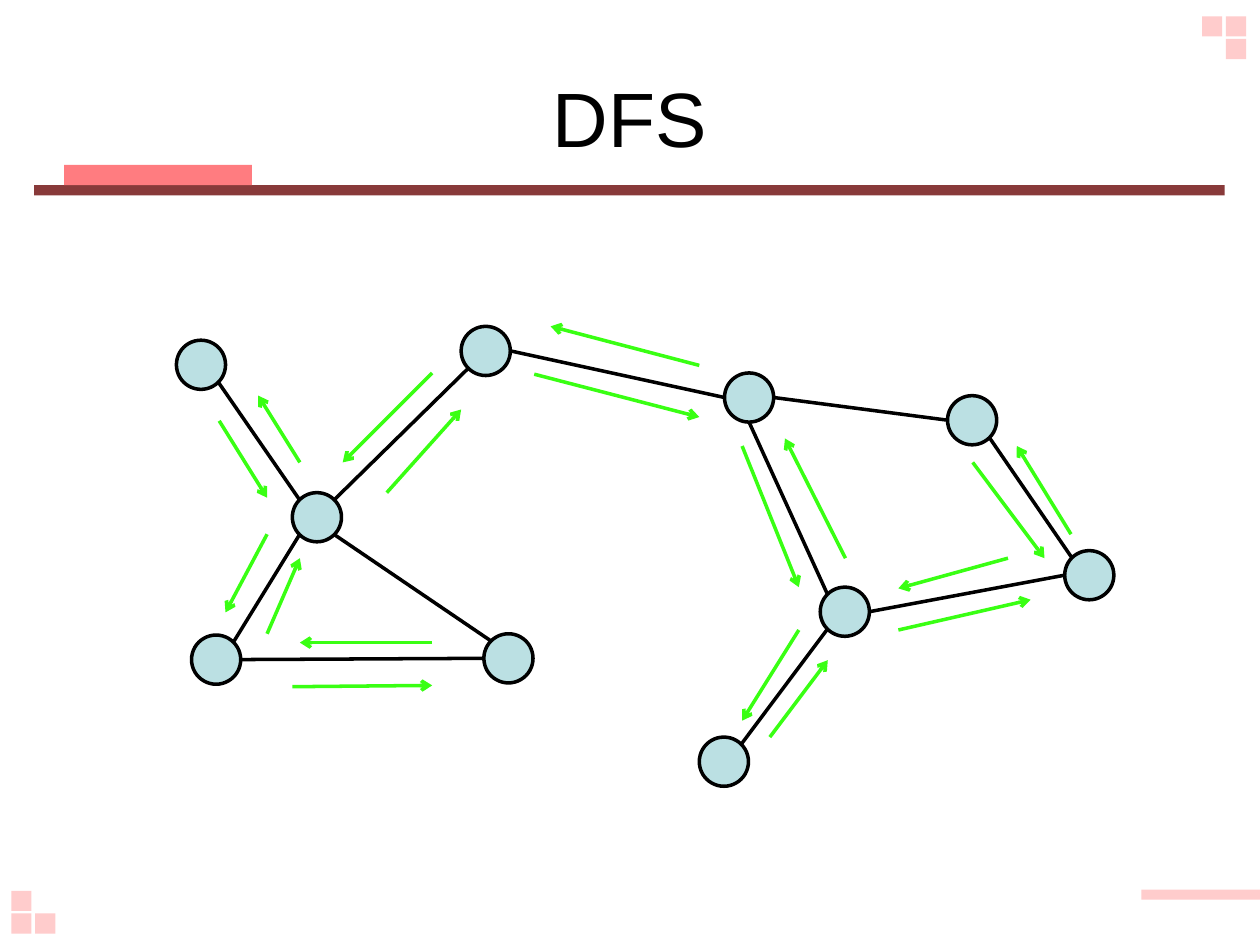
"""Build a slide that traces a depth-first search on a graph."""
from lxml import etree
from pptx import Presentation
from pptx.dml.color import RGBColor
from pptx.enum.shapes import MSO_CONNECTOR, MSO_SHAPE
from pptx.enum.text import MSO_ANCHOR, PP_ALIGN
from pptx.oxml.ns import qn
from pptx.util import Inches, Pt


def paint(part, color):
    part.solid()
    part.fore_color.rgb = RGBColor.from_string(color)


def draw(start, end, color):
    line = slide.shapes.add_connector(
        MSO_CONNECTOR.STRAIGHT, *[Inches(v) for v in (*start, *end)])
    paint(line.line.fill, color)
    line.line.width = Pt(2)
    etree.SubElement(line._element.spPr, qn("a:effectLst"))
    return line


deck = Presentation()
deck.slide_width, deck.slide_height = Inches(10), Inches(7.5)
slide = deck.slides.add_slide(deck.slide_layouts[6])

bars = [
    (0.27, 1.47, 9.45, 0.08, "883A3A"),
    (0.51, 1.31, 1.49, 0.16, "FF7C80"),
    (9.06, 7.06, 0.94, 0.08, "FFCCCC"),
]
spots = [(9.73, 0.13), (9.54, 0.13), (9.73, 0.31),
         (0.09, 7.25), (0.28, 7.25), (0.09, 7.07)]
bars += [(x, y, 0.16, 0.16, "FFCCCC") for x, y in spots]
for *box, color in bars:
    bar = slide.shapes.add_shape(MSO_SHAPE.RECTANGLE, *[Inches(v) for v in box])
    bar.shadow.inherit = False
    paint(bar.fill, color)
    bar.line.fill.background()

title = slide.shapes.add_textbox(Inches(0.5), Inches(0.3), Inches(9), Inches(1.25))
frame = title.text_frame
frame.word_wrap = True
frame.vertical_anchor = MSO_ANCHOR.MIDDLE
text = frame.paragraphs[0]
text.text = "DFS"
text.alignment = PP_ALIGN.CENTER
text.font.name, text.font.size = "Arial", Pt(44)
text.font.color.rgb = RGBColor.from_string("000000")

size = 0.39
nodes = {
    "A": (3.66, 2.59), "B": (2.32, 3.91), "C": (3.84, 5.03), "D": (5.75, 2.96),
    "E": (5.55, 5.85), "F": (7.52, 3.14), "G": (8.45, 4.37), "H": (6.51, 4.66),
    "I": (1.52, 5.04), "J": (1.4, 2.7),
}
for x, y in nodes.values():
    node = slide.shapes.add_shape(
        MSO_SHAPE.OVAL, Inches(x), Inches(y), Inches(size), Inches(size))
    node.shadow.inherit = False
    paint(node.fill, "BBE0E3")
    paint(node.line.fill, "000000")
    node.line.width = Pt(2)

near, far = 0.15 * size, 0.85 * size
sides = {
    "N": (size / 2, 0), "S": (size / 2, size),
    "W": (0, size / 2), "E": (size, size / 2),
    "NW": (near, near), "NE": (far, near), "SW": (near, far), "SE": (far, far),
}
edges = [
    ("J", "SE", "B", "NW"), ("B", "NE", "A", "SW"), ("B", "SW", "I", "NE"),
    ("B", "SE", "C", "NW"), ("I", "E", "C", "W"), ("D", "W", "A", "E"),
    ("D", "S", "H", "NW"), ("H", "SW", "E", "NE"), ("H", "E", "G", "W"),
    ("D", "E", "F", "W"), ("F", "SE", "G", "NW"),
]
for tail, out, head, into in edges:
    ends = [[a + b for a, b in zip(nodes[name], sides[side])]
            for name, side in ((tail, out), (head, into))]
    draw(*ends, "000000")

steps = [
    ((3.43, 2.96), (2.72, 3.67)), ((2.38, 3.67), (2.05, 3.14)),
    ((1.74, 3.34), (2.12, 3.95)), ((2.12, 4.24), (1.79, 4.86)),
    ((2.32, 5.45), (3.43, 5.44)), ((3.43, 5.1), (2.38, 5.1)),
    ((2.12, 5.03), (2.38, 4.43)), ((3.07, 3.91), (3.66, 3.25)),
    ((4.24, 2.97), (5.55, 3.31)), ((5.89, 3.54), (6.34, 4.66)),
    ((6.34, 5), (5.89, 5.72)), ((6.11, 5.85), (6.57, 5.24)),
    ((7.13, 5), (8.18, 4.76)), ((8.5, 4.24), (8.07, 3.54)),
    ((7.72, 3.67), (8.29, 4.43)), ((8, 4.43), (7.13, 4.67)),
    ((6.71, 4.43), (6.23, 3.48)), ((5.55, 2.9), (4.37, 2.59)),
]
for start, end in steps:
    arrow = draw(start, end, "39FF13")
    etree.SubElement(arrow.line._get_or_add_ln(), qn("a:tailEnd"), type="arrow")

deck.save("out.pptx")
